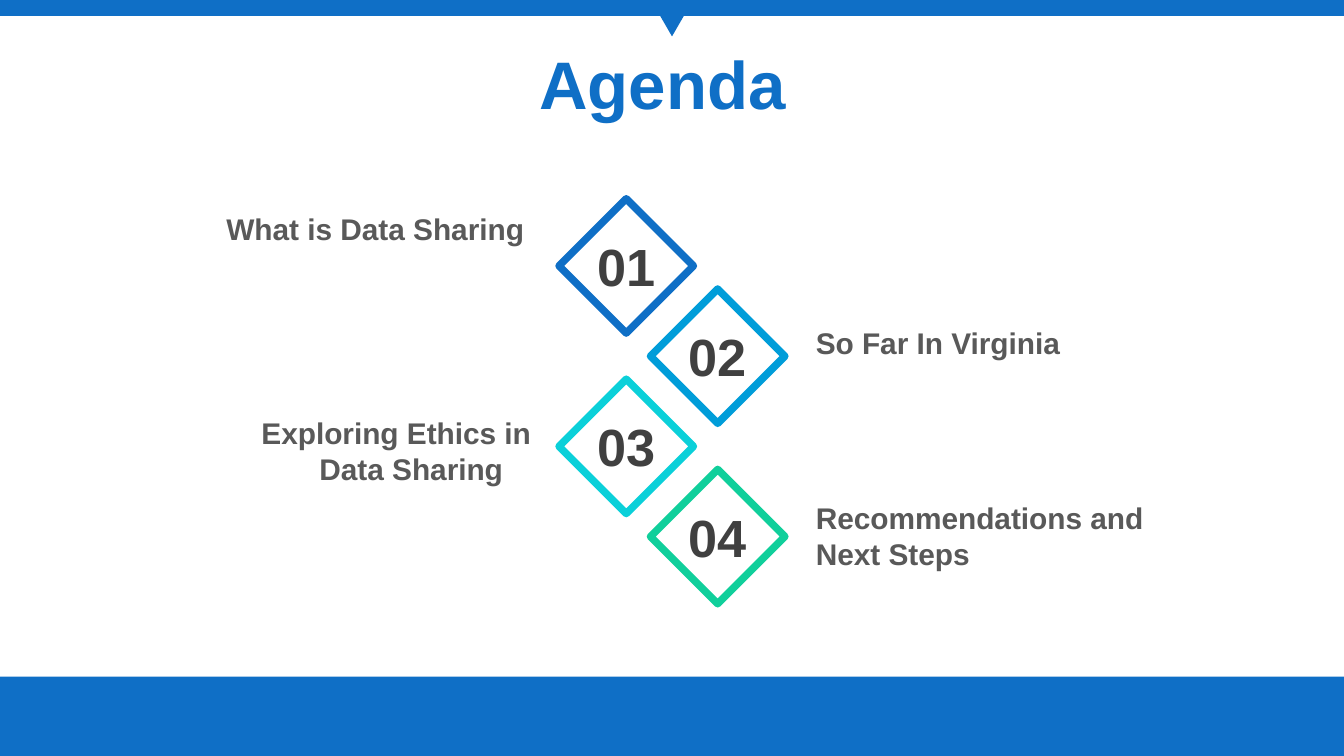
from dataclasses import dataclass

from lxml import etree
from pptx import Presentation
from pptx.dml.color import RGBColor
from pptx.enum import shapes, text
from pptx.oxml import ns
from pptx.util import Pt

KIND = shapes.MSO_SHAPE
LEFT, MID, RIGHT = text.PP_ALIGN.LEFT, text.PP_ALIGN.CENTER, text.PP_ALIGN.RIGHT
TOP, MIDDLE = text.MSO_ANCHOR.TOP, text.MSO_ANCHOR.MIDDLE


@dataclass(frozen=True)
class Theme:
    font: str = "Arial"
    blue: str = "0F6FC6"
    dark: str = "404040"
    gray: str = "595959"
    steps: tuple = ("0F6FC6", "009DD9", "0BD0D9", "10CF9B")
    title: int = 36
    number: int = 28
    label: int = 16


THEME = Theme()
WIDE, HIGH = 720, 405


def add_shape(slide, kind, box, fill=None, line=None):
    shape = slide.shapes.add_shape(kind, *map(Pt, box))
    shape.shadow.inherit = False
    if fill:
        shape.fill.solid()
        shape.fill.fore_color.rgb = RGBColor.from_string(fill)
    else:
        shape.fill.background()
    if line:
        shape.line.color.rgb = RGBColor.from_string(line)
        shape.line.width = Pt(4)
        etree.SubElement(shape.line._get_or_add_ln(), ns.qn("a:round"))
    else:
        shape.line.fill.background()
    return shape


def add_text(slide, box, words, size, color, align=LEFT, anchor=TOP, wrap=True, hang=0):
    """Add bold text; hang indents every line after the first."""
    frame = slide.shapes.add_textbox(*map(Pt, box)).text_frame
    frame.word_wrap = wrap
    frame.vertical_anchor = anchor
    para = frame.paragraphs[0]
    para.alignment = align
    if hang:
        props = para._p.get_or_add_pPr()
        props.set("marL", str(Pt(hang)))
        props.set("indent", str(-Pt(hang)))
    run = para.add_run()
    run.text = words
    run.font.name = THEME.font
    run.font.size = Pt(size)
    run.font.bold = True
    run.font.color.rgb = RGBColor.from_string(color)


def add_header(slide, x, y, w, h):
    add_shape(slide, KIND.RECTANGLE, (x, y, w, 8.5), THEME.blue)
    mark = add_shape(slide, KIND.ISOSCELES_TRIANGLE,
                     (x + w / 2 - 11.25, y, 22.5, 19.5), THEME.blue)
    mark.rotation = 180
    add_text(slide, (x, y + 9.5, w - 10, h - 9.5), "Agenda", THEME.title,
             THEME.blue, MID, MIDDLE)


def add_footer(slide, x, y, w, h):
    add_shape(slide, KIND.RECTANGLE, (x, y, w, h), THEME.blue)


def add_step(slide, x, y, side, number, color):
    add_shape(slide, KIND.DIAMOND, (x, y, side, side), line=color)
    add_text(slide, (x + 13, y + 15.5, 46, 41), f"{number:02}", THEME.number,
             THEME.dark, MID, wrap=False)


def add_agenda(slide, x, y, w, h):
    """Zigzag of diamonds, labels on the outer sides."""
    side = 72
    across, down = w - side, (h - side) / 3
    for i, color in enumerate(THEME.steps):
        add_step(slide, x + i % 2 * across, y + i * down, side, i + 1, color)

    east = x + w + 9.5
    labels = (
        ("What is Data Sharing", x - 246.5, 3, 235, RIGHT, 0),
        ("So Far In Virginia", east, 64, 210, LEFT, 0),
        ("Exploring Ethics in Data Sharing", x - 166.5, 112, 170, LEFT, 31),
        ("Recommendations and Next Steps", east, 157.5, 210, LEFT, 0),
    )
    for words, left, drop, width, align, hang in labels:
        add_text(slide, (left, y + drop, width, 46 if len(words) > 20 else 27),
                 words, THEME.label, THEME.gray, align, hang=hang)


def main():
    deck = Presentation()
    deck.slide_width, deck.slide_height = Pt(WIDE), Pt(HIGH)
    slide = deck.slides.add_slide(deck.slide_layouts[6])
    add_footer(slide, 0, 362.5, WIDE, HIGH - 362.5)
    add_header(slide, 0, 0, WIDE, 79)
    add_agenda(slide, 299.5, 106.5, 121, 217)
    deck.save("out.pptx")


if __name__ == "__main__":
    main()
